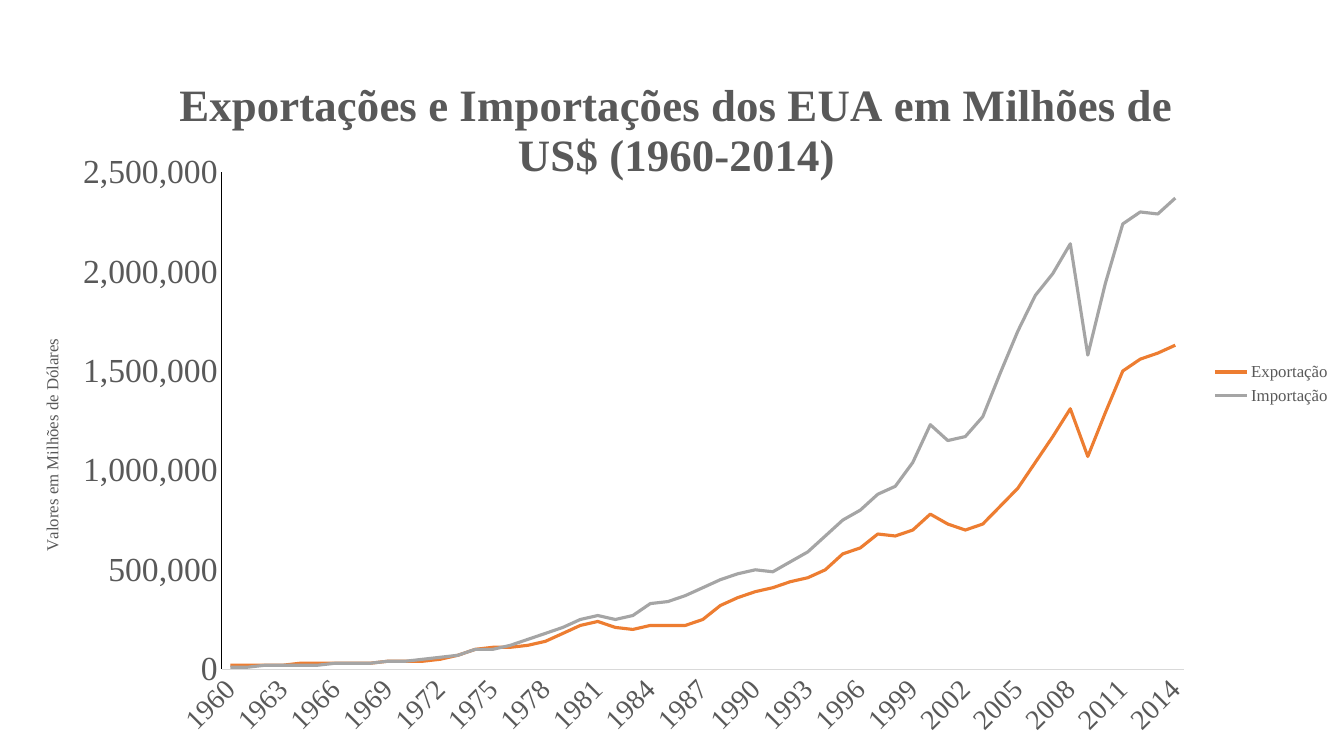
"""Build a slide with a line chart of US exports and imports, 1960-2014."""
from dataclasses import dataclass
from typing import Any

from lxml.etree import SubElement
from pptx import Presentation
from pptx.chart.data import CategoryChartData
from pptx.dml.color import RGBColor
from pptx.enum.chart import XL_CHART_TYPE, XL_LEGEND_POSITION, XL_TICK_LABEL_POSITION, XL_TICK_MARK
from pptx.oxml.ns import qn
from pptx.util import Inches, Pt

FONT_NAME = "Times New Roman"
BLACK = RGBColor(0x00, 0x00, 0x00)
GREY_TEXT = RGBColor(0x59, 0x59, 0x59)
GREY_LINE = RGBColor(0xD9, 0xD9, 0xD9)
ORANGE = RGBColor(0xED, 0x7D, 0x31)
GREY = RGBColor(0xA5, 0xA5, 0xA5)

TITLE = "Exportações e Importações dos EUA em Milhões de US$ (1960-2014)"
VALUE_TITLE = "Valores em Milhões de Dólares"
YEARS = range(1960, 2015)
VALUE_UNIT = 10_000


@dataclass(frozen=True)
class TradeFlow:
    name: str
    color: RGBColor
    amounts: tuple[int, ...]


FLOWS = (
    TradeFlow("Exportação", ORANGE, (
        2, 2, 2, 2, 3, 3, 3, 3, 3, 4,
        4, 4, 5, 7, 10, 11, 11, 12, 14, 18,
        22, 24, 21, 20, 22, 22, 22, 25, 32, 36,
        39, 41, 44, 46, 50, 58, 61, 68, 67, 70,
        78, 73, 70, 73, 82, 91, 104, 117, 131, 107,
        129, 150, 156, 159, 163)),
    TradeFlow("Importação", GREY, (
        1, 1, 2, 2, 2, 2, 3, 3, 3, 4,
        4, 5, 6, 7, 10, 10, 12, 15, 18, 21,
        25, 27, 25, 27, 33, 34, 37, 41, 45, 48,
        50, 49, 54, 59, 67, 75, 80, 88, 92, 104,
        123, 115, 117, 127, 149, 170, 188, 199, 214, 158,
        194, 224, 230, 229, 237)),
)


def set_font(font: Any, size: int, bold: bool = False) -> None:
    """Apply the shared typeface and text colour."""
    font.name = FONT_NAME
    font.size = Pt(size)
    font.bold = bold
    font.color.rgb = GREY_TEXT


def set_title(title: Any, text: str, size: int, bold: bool = False) -> None:
    """Write and format a chart or axis title."""
    title.text_frame.text = text
    for run in title.text_frame.paragraphs[0].runs:
        set_font(run.font, size, bold)


def place(parent: Any, index: int, **fractions: float) -> None:
    """Give a chart part a manual layout in fractions of the chart area."""
    for layout in parent.findall(qn("c:layout")):
        parent.remove(layout)
    layout = SubElement(parent, qn("c:layout"))
    parent.insert(index, layout)
    manual = SubElement(layout, qn("c:manualLayout"))
    if index == 0:
        SubElement(manual, qn("c:layoutTarget")).set("val", "inner")
    for mode in ("xMode", "yMode"):
        SubElement(manual, qn(f"c:{mode}")).set("val", "edge")
    for key, fraction in fractions.items():
        SubElement(manual, qn(f"c:{key}")).set("val", str(fraction))


def format_axis(axis: Any, size: int, line_color: RGBColor) -> None:
    """Format the labels and line of an axis without ticks or gridlines."""
    axis.has_major_gridlines = False
    axis.major_tick_mark = axis.minor_tick_mark = XL_TICK_MARK.NONE
    axis.tick_label_position = XL_TICK_LABEL_POSITION.NEXT_TO_AXIS
    set_font(axis.tick_labels.font, size)
    axis.format.line.color.rgb = line_color
    axis.format.line.width = Pt(0.75)


def format_years(axis: Any) -> None:
    """Show every third year, slanted upwards."""
    format_axis(axis, 20, GREY_LINE)
    year_axis = axis._element
    year_axis.find(qn("c:txPr")).find(qn("a:bodyPr")).set("rot", "-2700000")
    label_skip = SubElement(year_axis, qn("c:tickLblSkip"))
    label_skip.set("val", "3")
    year_axis.find(qn("c:noMultiLvlLbl")).addprevious(label_skip)


def format_values(axis: Any) -> None:
    """Set the value scale and its vertical title."""
    format_axis(axis, 24, BLACK)
    axis.minimum_scale, axis.maximum_scale, axis.major_unit = 0, 2_500_000, 500_000
    axis.tick_labels.number_format = "#,##0"
    axis.tick_labels.number_format_is_linked = False
    set_title(axis.axis_title, VALUE_TITLE, 12)
    body = axis.axis_title.text_frame._txBody.find(qn("a:bodyPr"))
    body.set("rot", "-5400000")
    body.set("vert", "horz")
    place(axis.axis_title._element, 1, x=0.02, y=0.44)


def add_trade_chart(slide: Any) -> None:
    """Add the chart of both trade flows."""
    trade = CategoryChartData(number_format="#,##0")
    trade.categories = [str(year) for year in YEARS]
    for flow in FLOWS:
        trade.add_series(flow.name, [amount * VALUE_UNIT for amount in flow.amounts])
    chart = slide.shapes.add_chart(
        XL_CHART_TYPE.LINE, Inches(0.12), Inches(0.09), Inches(13.15), Inches(7.36), trade).chart
    set_font(chart.font, 12)

    chart.has_title = True
    set_title(chart.chart_title, TITLE, 32, bold=True)
    place(chart.chart_title._element, 1, x=0.12, y=0.08)

    chart.has_legend = True
    chart.legend.position = XL_LEGEND_POSITION.RIGHT
    chart.legend.include_in_layout = False
    set_font(chart.legend.font, 12)
    place(chart.legend._element, 1, x=0.9, y=0.47, w=0.1, h=0.07)

    format_years(chart.category_axis)
    format_values(chart.value_axis)
    place(chart.plots[0]._element.getparent(), 0, x=0.158, y=0.22, w=0.726, h=0.67)

    for series, flow in zip(chart.plots[0].series, FLOWS):
        series.smooth = False
        series.format.line.color.rgb = flow.color
        series.format.line.width = Pt(2.25)


def main() -> None:
    """Create and save the presentation."""
    presentation = Presentation()
    presentation.slide_width = Inches(13.33)
    presentation.slide_height = Inches(7.5)
    add_trade_chart(presentation.slides.add_slide(presentation.slide_layouts[6]))
    presentation.save("out.pptx")


if __name__ == "__main__":
    main()
